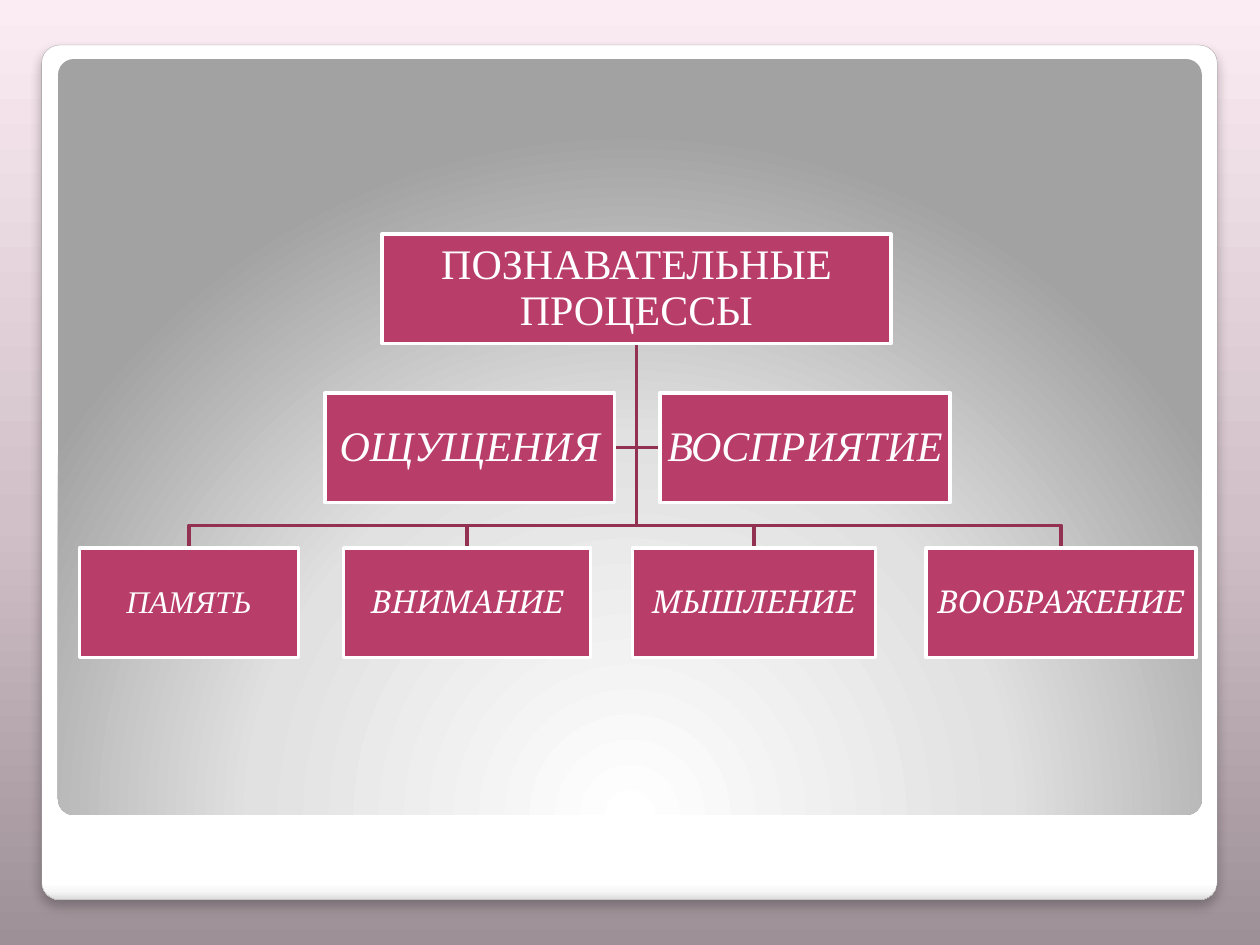
from lxml import etree
from pptx import Presentation
from pptx.dml.color import RGBColor
from pptx.enum.shapes import MSO_SHAPE
from pptx.enum.text import MSO_ANCHOR, PP_ALIGN
from pptx.oxml import parse_xml
from pptx.oxml.ns import nsdecls, qn
from pptx.util import Cm, Pt

RECTANGLE = MSO_SHAPE.RECTANGLE
ROUNDED = MSO_SHAPE.ROUNDED_RECTANGLE
MIDDLE = MSO_ANCHOR.MIDDLE
CENTER = PP_ALIGN.CENTER


def color(value):
    return RGBColor.from_string(value)


def set_gradient(element, stops, direction):
    stop_list = "".join(
        f'<a:gs pos="{position * 1000}"><a:srgbClr val="{value}"/></a:gs>'
        for position, value in stops
    )
    gradient = parse_xml(
        f'<a:gradFill {nsdecls("a")} rotWithShape="1">'
        f"<a:gsLst>{stop_list}</a:gsLst>{direction}</a:gradFill>"
    )
    solid = element.find(".//" + qn("a:solidFill"))
    solid.getparent().replace(solid, gradient)


presentation = Presentation()
presentation.slide_width = Cm(25.4)
presentation.slide_height = Cm(19.05)
slide = presentation.slides.add_slide(presentation.slide_layouts[6])

slide.background.fill.solid()
set_gradient(
    slide._element,
    [(0, "9D9096"), (45, "D1C0C8"), (100, "FBEBF2")],
    '<a:lin ang="16200000" scaled="0"/>',
)

frame = slide.shapes.add_shape(ROUNDED, Cm(0.84), Cm(0.91), Cm(23.7), Cm(17.23))
panel = slide.shapes.add_shape(ROUNDED, Cm(1.17), Cm(1.19), Cm(23.06), Cm(15.24))
for shape in (frame, panel):
    shape.adjustments[0] = 0.021
    shape.shadow.inherit = False
    shape.fill.solid()
    shape.line.fill.background()

set_gradient(
    frame._element,
    [(0, "FFFFFF"), (98, "FFFFFF"), (99, "F7F7F7"), (100, "DADADA")],
    '<a:lin ang="5400000" scaled="0"/>',
)
frame.line.color.rgb = color("A4A4A4")
frame.line.width = Pt(0.16)
shadow = etree.SubElement(
    frame._element.spPr.find(qn("a:effectLst")), qn("a:outerShdw"),
    blurRad=str(Pt(6)), dist=str(Pt(4)), dir="5400000", algn="t", rotWithShape="0",
)
shadow_color = etree.SubElement(shadow, qn("a:srgbClr"), val="000000")
etree.SubElement(shadow_color, qn("a:alpha"), val="25000")

set_gradient(
    panel._element,
    [(0, "FFFFFF"), (55, "E1E1E1"), (100, "A2A2A2")],
    '<a:path path="circle">'
    '<a:fillToRect l="50000" t="175000" r="50000" b="-75000"/></a:path>',
)

box_height = 2.21
root_top, middle_top, leaf_top = 4.72, 7.92, 11.05
boxes = [
    ("ПОЗНАВАТЕЛЬНЫЕ ПРОЦЕССЫ", 7.7, root_top, 10.26, 24, "Times New Roman"),
    ("ПАМЯТЬ", 1.6, leaf_top, 4.42, 18, "Times New Roman"),
    ("ВНИМАНИЕ", 6.93, leaf_top, 4.98, 18, "Cambria"),
    ("МЫШЛЕНИЕ", 12.75, leaf_top, 4.9, 18, "Cambria"),
    ("ВООБРАЖЕНИЕ", 18.67, leaf_top, 5.44, 18, "Cambria"),
    ("ОЩУЩЕНИЯ", 6.55, middle_top, 5.84, 24, "Times New Roman"),
    ("ВОСПРИЯТИЕ", 13.31, middle_top, 5.84, 24, "Times New Roman"),
]

trunk_x = 12.83
trunk_top = root_top + box_height
branch_y = 10.59
middle_y = middle_top + box_height / 2
routes = [[(trunk_x, middle_y), (edge, middle_y)] for edge in (13.31, 12.39)]
for text, left, top, width, size, font_name in boxes:
    if top == leaf_top:
        leaf_x = left + width / 2
        routes.append([(trunk_x, branch_y), (leaf_x, branch_y), (leaf_x, leaf_top)])

for route in routes:
    builder = slide.shapes.build_freeform(Cm(trunk_x), Cm(trunk_top))
    builder.add_line_segments([(Cm(x), Cm(y)) for x, y in route], close=False)
    branch = builder.convert_to_shape()
    branch.shadow.inherit = False
    branch.fill.background()
    branch.line.color.rgb = color("933153")
    branch.line.width = Pt(2)

for text, left, top, width, size, font_name in boxes:
    box = slide.shapes.add_shape(RECTANGLE, Cm(left), Cm(top), Cm(width), Cm(box_height))
    box.shadow.inherit = False
    box.fill.solid()
    box.fill.fore_color.rgb = color("B83D68")
    box.line.color.rgb = color("FFFFFF")
    box.line.width = Pt(2)
    text_frame = box.text_frame
    text_frame.word_wrap = True
    text_frame.vertical_anchor = MIDDLE
    text_frame.margin_left = text_frame.margin_right = Cm(0.04)
    text_frame.margin_top = text_frame.margin_bottom = Cm(0.04)
    text_frame.text = text
    paragraph = text_frame.paragraphs[0]
    paragraph.alignment = CENTER
    paragraph.line_spacing = 0.9
    paragraph.font.name = font_name
    paragraph.font.size = Pt(size)
    paragraph.font.italic = top != root_top
    paragraph.font.color.rgb = color("FFFFFF")

presentation.save("out.pptx")
